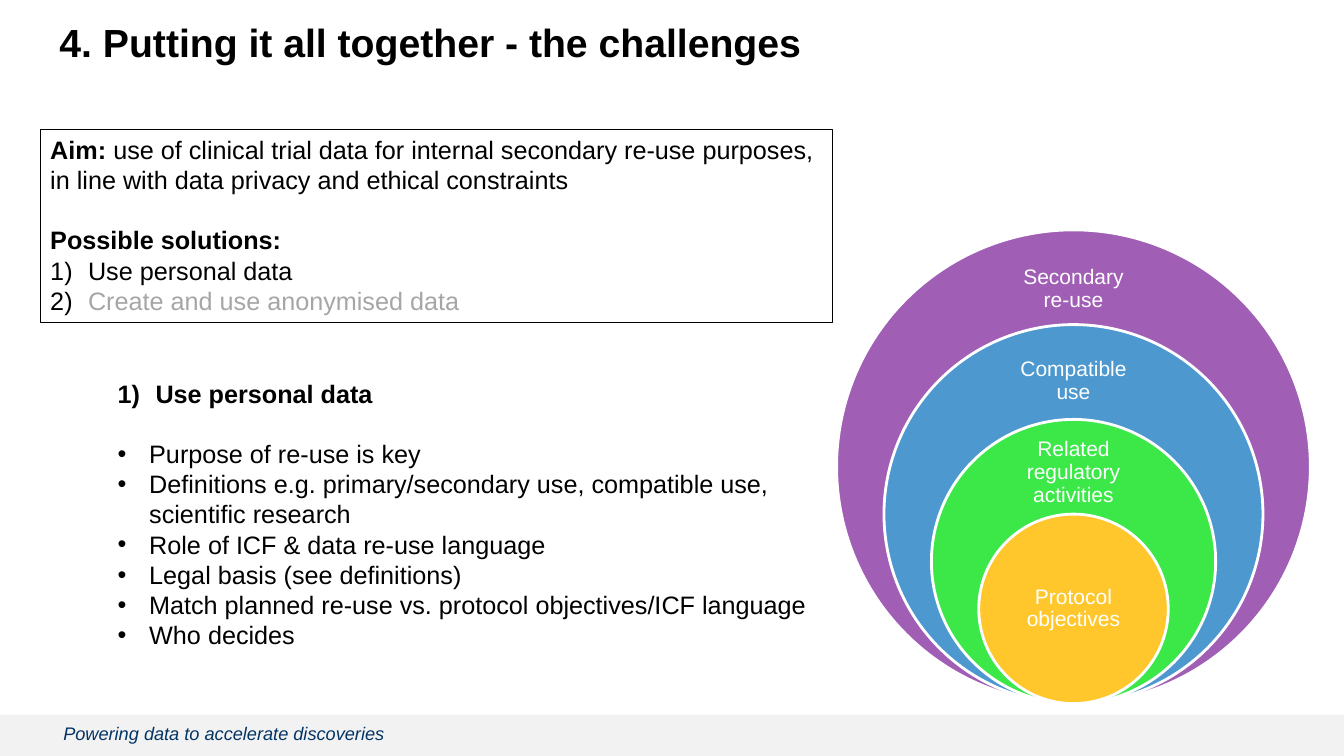
from dataclasses import dataclass

from lxml import etree
from pptx import Presentation
from pptx.dml.color import RGBColor
from pptx.enum import shapes, text
from pptx.oxml import ns
from pptx.util import Pt


@dataclass(frozen=True)
class Theme:
    font: str = "Arial"
    ink: str = "000000"
    muted: str = "A6A6A6"
    paper: str = "FFFFFF"
    band: str = "F2F2F2"
    motto: str = "043464"
    title_size: float = 28
    body_size: float = 18
    label_size: float = 15
    motto_size: float = 13
    blank_line: float = 21.5


THEME = Theme()

# label, fill, diameter share, then label top and height as shares of the circle
CIRCLES = [
    ("Secondary re-use", "A05EB5", 1.0, 0.05, 0.15),
    ("Compatible use", "4C98CF", 0.8, 0.06, 0.18),
    ("Related regulatory activities", "3BE848", 0.6, 0.075, 0.225),
    ("Protocol objectives", "FFC72C", 0.4, 0.25, 0.5),
]
CONSIDERATIONS = [
    "Purpose of re-use is key",
    "Definitions e.g. primary/secondary use, compatible use, scientific research",
    "Role of ICF & data re-use language",
    "Legal basis (see definitions)",
    "Match planned re-use vs. protocol objectives/ICF language",
    "Who decides",
]


def style(font, size, color=THEME.ink, bold=False, italic=False):
    font.name = THEME.font
    font.size = Pt(size)
    font.color.rgb = RGBColor.from_string(color)
    font.bold = bold
    font.italic = italic


def set_frame(frame, inset_x=7.2, inset_y=3.6, anchor=text.MSO_ANCHOR.TOP):
    frame.word_wrap = True
    frame.margin_left = frame.margin_right = Pt(inset_x)
    frame.margin_top = frame.margin_bottom = Pt(inset_y)
    frame.vertical_anchor = anchor


def add_marker(paragraph, tag, indent, **attributes):
    """Give the paragraph a hanging bullet (buChar) or number (buAutoNum)."""
    props = paragraph._p.get_or_add_pPr()
    props.set("marL", str(Pt(indent)))
    props.set("indent", str(-Pt(indent)))
    color = etree.SubElement(props, ns.qn("a:buClr"))
    etree.SubElement(color, ns.qn("a:srgbClr"), val=THEME.ink)
    etree.SubElement(props, ns.qn("a:buFont"), typeface=THEME.font)
    etree.SubElement(props, ns.qn(tag), **attributes)


def add_number(paragraph):
    add_marker(paragraph, "a:buAutoNum", 27, type="arabicParenR")


def add_panel(slide, kind, left, top, width, height, fill=None, line=None, weight=0.75):
    panel = slide.shapes.add_shape(kind, Pt(left), Pt(top), Pt(width), Pt(height))
    panel.shadow.inherit = False
    for paint, color in ((panel.fill, fill), (panel.line.fill, line)):
        if color:
            paint.solid()
            paint.fore_color.rgb = RGBColor.from_string(color)
        else:
            paint.background()
    if line:
        panel.line.width = Pt(weight)
    return panel


def add_text(slide, left, top, width, height, **frame_options):
    frame = slide.shapes.add_textbox(Pt(left), Pt(top), Pt(width), Pt(height)).text_frame
    set_frame(frame, **frame_options)
    return frame


def footer(slide, left, top, width, height):
    add_panel(slide, shapes.MSO_SHAPE.RECTANGLE, left, top, width, height, THEME.band)
    motto = add_text(slide, left + 45.2, top + 5.6, 859, 16.6, inset_x=0, inset_y=0)
    motto.text = "Powering data to accelerate discoveries"
    style(motto.paragraphs[0].runs[0].font, THEME.motto_size, THEME.motto, italic=True)


def heading(slide, left, top, width, height):
    title = slide.shapes.title
    title.left, title.top, title.width, title.height = map(Pt, (left, top, width, height))
    set_frame(title.text_frame, 0, 0)
    title.text_frame.text = "4. Putting it all together - the challenges"
    paragraph = title.text_frame.paragraphs[0]
    paragraph.alignment = text.PP_ALIGN.LEFT
    style(paragraph.runs[0].font, THEME.title_size, bold=True)


def nested_circles(slide, left, top, size):
    """Draw circles that share their lowest point, each with its label."""
    center, bottom, label_width = left + size / 2, top + size, 95
    for label, fill, share, label_top, label_height in CIRCLES:
        diameter = size * share
        circle_top = bottom - diameter
        add_panel(slide, shapes.MSO_SHAPE.OVAL, center - diameter / 2, circle_top,
                  diameter, diameter, fill, THEME.paper, 2)
        caption = add_text(slide, center - label_width / 2, circle_top + diameter * label_top,
                           label_width, diameter * label_height,
                           inset_x=8.6, inset_y=8.6, anchor=text.MSO_ANCHOR.MIDDLE)
        caption.text = label
        paragraph = caption.paragraphs[0]
        paragraph.alignment = text.PP_ALIGN.CENTER
        paragraph.line_spacing = 0.9
        style(paragraph.runs[0].font, THEME.label_size, THEME.paper)


def considerations(slide, left, top, width, height):
    frame = add_text(slide, left, top, width, height)
    frame.text = "\n".join(["Use personal data"] + CONSIDERATIONS)
    lead, *points = frame.paragraphs
    add_number(lead)
    style(lead.runs[0].font, THEME.body_size, bold=True)
    points[0].space_before = Pt(THEME.blank_line)
    for point in points:
        add_marker(point, "a:buChar", 22.5, char="•")
        style(point.runs[0].font, THEME.body_size)


def aim_box(slide, left, top, width, height):
    box = add_panel(slide, shapes.MSO_SHAPE.RECTANGLE, left, top, width, height, line=THEME.ink)
    frame = box.text_frame
    set_frame(frame)
    frame.text = "\n".join(["Aim: ", "Possible solutions:", "Use personal data",
                            "Create and use anonymised data"])
    aim, solutions, personal, anonymised = frame.paragraphs
    aim.add_run().text = "use of clinical trial data for internal secondary re-use purposes, "
    aim.add_line_break()
    aim.add_run().text = "in line with data privacy and ethical constraints"
    solutions.space_before = Pt(THEME.blank_line)
    add_number(personal)
    add_number(anonymised)
    for paragraph in frame.paragraphs:
        paragraph.alignment = text.PP_ALIGN.LEFT
        for run in paragraph.runs:
            style(run.font, THEME.body_size)
    aim.runs[0].font.bold = solutions.runs[0].font.bold = True
    anonymised.runs[0].font.color.rgb = RGBColor.from_string(THEME.muted)


def main():
    deck = Presentation()
    deck.slide_width, deck.slide_height = Pt(960), Pt(540)
    slide = deck.slides.add_slide(deck.slide_layouts[5])
    footer(slide, 0, 510.5, 960, 29.5)
    heading(slide, 42.5, 13, 879, 40.3)
    nested_circles(slide, 597.6, 164.2, 338.4)
    considerations(slide, 77, 266.4, 543.6, 225.4)
    aim_box(slide, 28.8, 92.2, 566, 138.2)
    deck.save("out.pptx")


if __name__ == "__main__":
    main()
